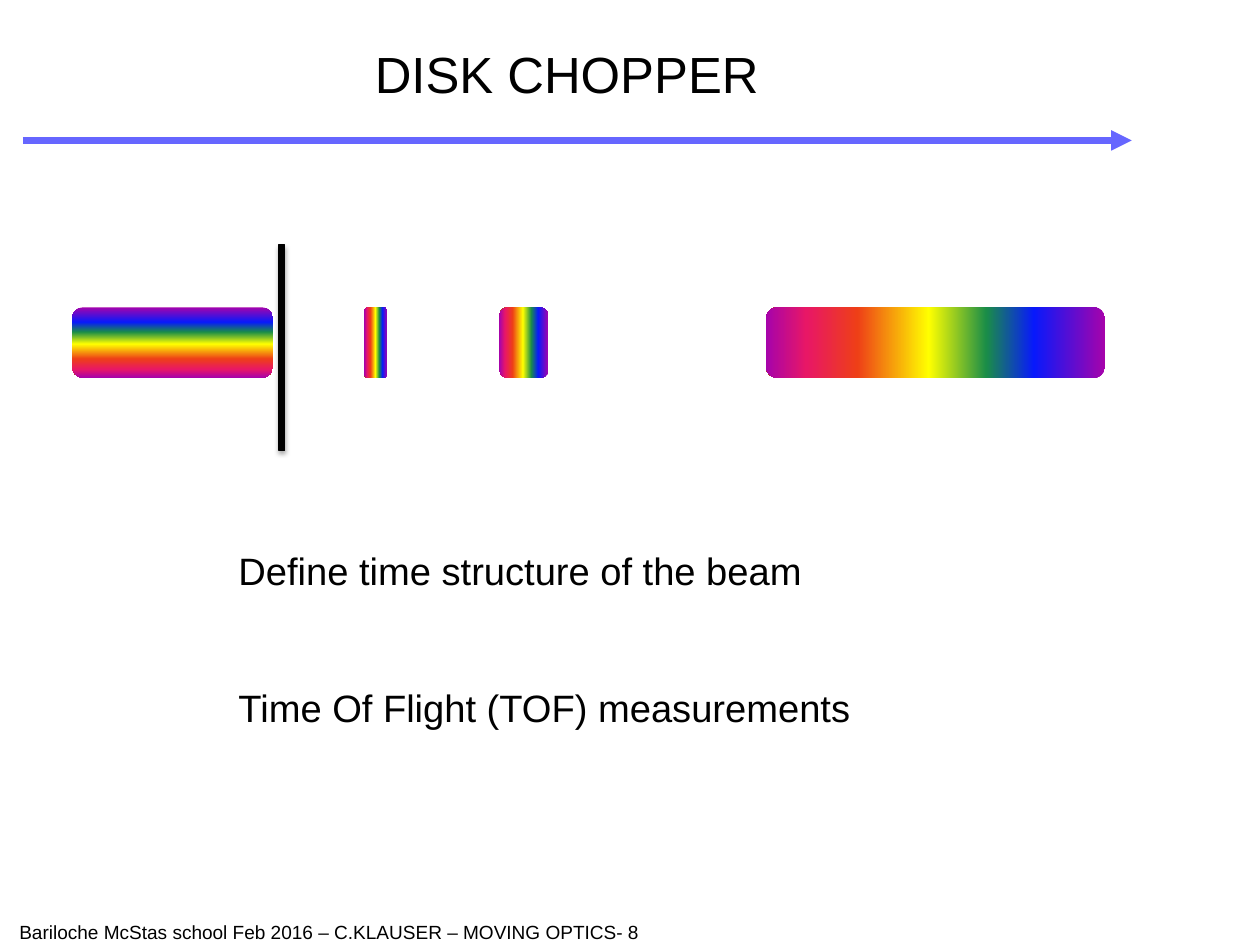
from lxml import etree
from pptx import Presentation
from pptx.dml.color import RGBColor
from pptx.enum.shapes import MSO_CONNECTOR, MSO_SHAPE
from pptx.enum.text import MSO_ANCHOR, MSO_AUTO_SIZE, PP_ALIGN
from pptx.oxml import parse_xml
from pptx.oxml.ns import qn
from pptx.util import Cm, Pt

ROUNDED = MSO_SHAPE.ROUNDED_RECTANGLE
RECTANGLE = MSO_SHAPE.RECTANGLE
STRAIGHT = MSO_CONNECTOR.STRAIGHT
MIDDLE, TOP = MSO_ANCHOR.MIDDLE, MSO_ANCHOR.TOP
CENTER, LEFT = PP_ALIGN.CENTER, PP_ALIGN.LEFT
GROW, FIXED = MSO_AUTO_SIZE.SHAPE_TO_FIT_TEXT, MSO_AUTO_SIZE.NONE
DRAWING = "http://schemas.openxmlformats.org/drawingml/2006/main"

TITLE = "DISK CHOPPER"
STATEMENTS = ["Define time structure of the beam", "Time Of Flight (TOF) measurements"]
FOOTER = "Bariloche McStas school Feb 2016 – C.KLAUSER – MOVING OPTICS- 8"

THEME = {
    "font": "Arial",
    "ink": "000000",
    "arrow": "6666FF",
    "spectrum": [(0, "A603AB"), (21, "0819FB"), (35, "1A8D48"), (52, "FFFF00"),
                 (73, "EE3F17"), (88, "E81766"), (100, "A603AB")],
    "title_size": 32,
    "body_size": 24,
    "footer_size": 12,
    "line_height": 28.8,
}

PULSE_TOP, PULSE_HEIGHT = 6.83, 1.57
PULSES = [(1.6, 4.47, 90), (17.02, 7.54, 180), (8.1, 0.51, 180), (11.1, 1.09, 180)]
CHOPPER = (6.2, 5.44, 0.13, 4.57)
ARROW = (0.51, 25.15, 3.12)


def color(value):
    return RGBColor.from_string(value)


def add_text(slide, box, lines, size, alignment=LEFT, anchor=TOP, margin=True,
             wrap=True, line_height=None, gap=0):
    frame = slide.shapes.add_textbox(*map(Cm, box)).text_frame
    frame.word_wrap = wrap
    frame.auto_size = FIXED if wrap else GROW
    frame.vertical_anchor = anchor
    if not margin:
        frame.margin_left = frame.margin_right = frame.margin_top = frame.margin_bottom = 0
    for index, line in enumerate(lines):
        paragraph = frame.add_paragraph() if index else frame.paragraphs[0]
        paragraph.alignment = alignment
        if line_height:
            paragraph.line_spacing = Pt(line_height)
        if index:
            paragraph.space_before = Pt(gap)
        run = paragraph.add_run()
        run.text = line
        run.font.name = THEME["font"]
        run.font.size = Pt(size)
        run.font.color.rgb = color(THEME["ink"])


def add_arrow(slide, left, right, height):
    arrow = slide.shapes.add_connector(STRAIGHT, Cm(left), Cm(height), Cm(right), Cm(height))
    arrow.line.color.rgb = color(THEME["arrow"])
    arrow.line.width = Pt(4.31)
    etree.SubElement(arrow.line._get_or_add_ln(), qn("a:tailEnd"), type="triangle")
    etree.SubElement(arrow._element.spPr, qn("a:effectLst"))


def add_pulse(slide, left, width, angle):
    pulse = slide.shapes.add_shape(ROUNDED, Cm(left), Cm(PULSE_TOP), Cm(width), Cm(PULSE_HEIGHT))
    pulse.shadow.inherit = False
    pulse.line.fill.background()
    stops = "".join(f'<a:gs pos="{position * 1000}"><a:srgbClr val="{value}"/></a:gs>'
                    for position, value in THEME["spectrum"])
    gradient = parse_xml(f'<a:gradFill xmlns:a="{DRAWING}" rotWithShape="1"><a:gsLst>{stops}'
                         f'</a:gsLst><a:lin ang="{angle * 60000}" scaled="0"/></a:gradFill>')
    pulse._element.spPr.find(qn("a:prstGeom")).addnext(gradient)


def add_chopper(slide):
    chopper = slide.shapes.add_shape(RECTANGLE, *map(Cm, CHOPPER))
    chopper.shadow.inherit = False
    chopper.fill.solid()
    chopper.fill.fore_color.rgb = color(THEME["ink"])
    chopper.line.color.rgb = color(THEME["ink"])
    chopper.line.width = Pt(0.75)
    effects = chopper._element.spPr.find(qn("a:effectLst"))
    shadow = etree.SubElement(effects, qn("a:outerShdw"), blurRad=str(Pt(3.1)),
                              dist=str(Pt(1.8)), dir="5400000", rotWithShape="0")
    shade = etree.SubElement(shadow, qn("a:srgbClr"), val=THEME["ink"])
    etree.SubElement(shade, qn("a:alpha"), val="35000")


def main():
    presentation = Presentation()
    presentation.slide_width, presentation.slide_height = Cm(28), Cm(21)
    slide = presentation.slides.add_slide(presentation.slide_layouts[6])
    add_text(slide, (0.18, 20.32, 20.32, 0.69), [FOOTER], THEME["footer_size"])
    add_arrow(slide, *ARROW)
    add_text(slide, (0, 0.53, 25.2, 2.21), [TITLE], THEME["title_size"],
             CENTER, MIDDLE, margin=False)
    for pulse in PULSES:
        add_pulse(slide, *pulse)
    add_chopper(slide)
    line_height = THEME["line_height"]
    add_text(slide, (5.05, 12.04, 14.25, 4.37), STATEMENTS, THEME["body_size"],
             wrap=False, line_height=line_height, gap=2 * line_height)
    presentation.save("out.pptx")


if __name__ == "__main__":
    main()
